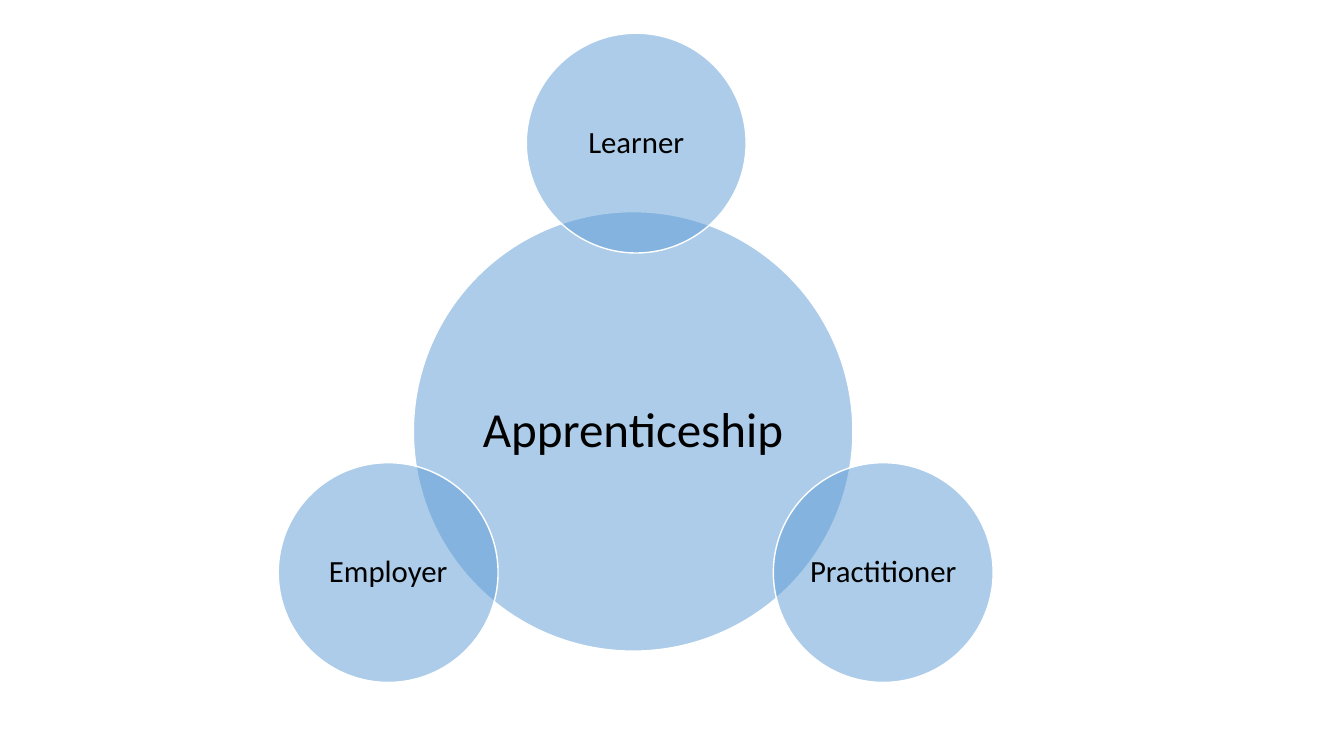
from lxml import etree
from pptx import Presentation
from pptx.dml.color import RGBColor
from pptx.enum.shapes import MSO_SHAPE
from pptx.enum.text import MSO_ANCHOR, PP_ALIGN
from pptx.oxml.ns import qn
from pptx.util import Pt

EMU_PER_PX = 9144  # 100 px to the inch
BLUE = RGBColor(0x5B, 0x9B, 0xD5)
WHITE = RGBColor(0xFF, 0xFF, 0xFF)
BLACK = RGBColor(0x00, 0x00, 0x00)
FONT = "Calibri"
BLANK_LAYOUT = 6

HUB_DIAMETER = 436
PARTY_DIAMETER = 218
PARTIES = [
    ("Learner", 522, 33),
    ("Practitioner", 767, 459),
    ("Employer", 276, 459),
]


def px(length):
    return int(length * EMU_PER_PX)


def set_opacity(shape, percent):
    color = shape.fill._xPr.find(qn("a:solidFill"))[0]
    etree.SubElement(color, qn("a:alpha"), val=str(percent * 1000))


def add_circle(slide, text, left, top, diameter, size, inset):
    """Add a half-transparent circle with its label in the middle."""
    shape = slide.shapes.add_shape(
        MSO_SHAPE.OVAL, px(left), px(top), px(diameter), px(diameter))
    shape.shadow.inherit = False
    shape.fill.solid()
    shape.fill.fore_color.rgb = BLUE
    set_opacity(shape, 50)
    shape.line.color.rgb = WHITE
    shape.line.width = Pt(1)

    frame = shape.text_frame
    frame.word_wrap = False
    frame.vertical_anchor = MSO_ANCHOR.MIDDLE
    frame.margin_left = frame.margin_right = px(inset)
    frame.margin_top = frame.margin_bottom = px(inset)
    frame.text = text
    paragraph = frame.paragraphs[0]
    paragraph.alignment = PP_ALIGN.CENTER
    paragraph.line_spacing = 0.9
    font = paragraph.runs[0].font
    font.name = FONT
    font.size = Pt(size)
    font.color.rgb = BLACK


def main():
    presentation = Presentation()
    presentation.slide_width = px(1333)
    presentation.slide_height = px(750)
    slide = presentation.slides.add_slide(
        presentation.slide_layouts[BLANK_LAYOUT])

    add_circle(slide, "Apprenticeship", 410, 210, HUB_DIAMETER, 35, 5)
    for name, left, top in PARTIES:
        add_circle(slide, name, left, top, PARTY_DIAMETER, 22, 3)

    presentation.save("out.pptx")


if __name__ == "__main__":
    main()
